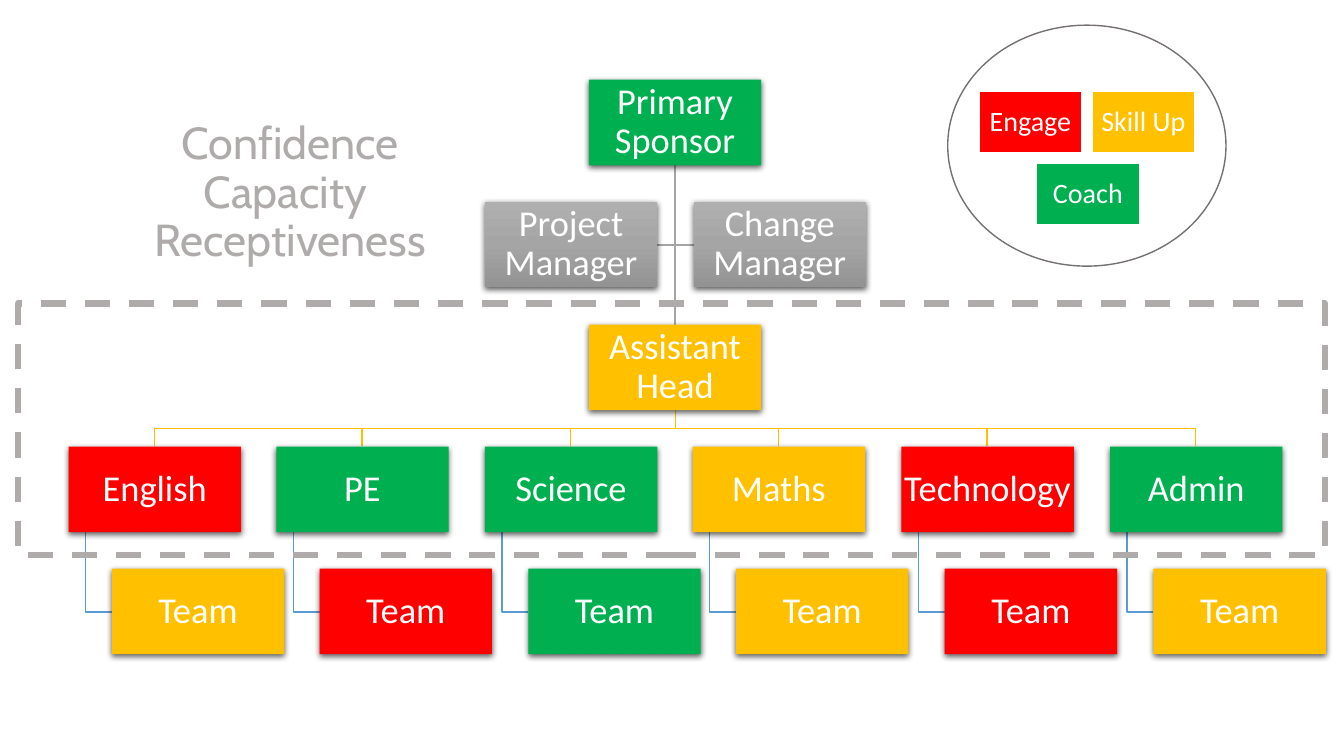
import copy
from dataclasses import dataclass

from lxml import etree
from pptx import Presentation
from pptx import util as u
from pptx.dml.color import RGBColor
from pptx.enum import dml, shapes, text
from pptx.oxml.ns import qn

PX = 9144  # EMU per px, 100 px to the inch


@dataclass(frozen=True)
class Theme:
    red: str = "FF0000"
    amber: str = "FFC000"
    green: str = "00B050"
    grey: str = "A5A5A5"
    grey_stops: tuple = ("AFAFAF", "A5A5A5", "939393")
    blue: str = "5B9BD5"
    muted: str = "AFABAB"
    ring: str = "767171"
    white: str = "FFFFFF"
    body_font: str = "Calibri"
    title_font: str = "Cabin"
    role_size: int = 26
    key_size: int = 20
    title_size: int = 32


@dataclass(frozen=True)
class Box:
    label: str
    left: int
    top: int
    color: str


@dataclass(frozen=True)
class Department:
    name: str
    color: str
    team_color: str


THEME = Theme()
BOX_WIDTH, BOX_HEIGHT = 171, 85
KEY_WIDTH, KEY_HEIGHT = 102, 61
CENTRE = 670
SPONSOR_TOP, MANAGER_TOP, HEAD_TOP, DEPARTMENT_TOP, TEAM_TOP = 79, 200, 322, 443, 564
FIRST_LEFT, PITCH_TENTHS, TEAM_INDENT, STEM_INDENT = 68, 2066, 43, 17

SPONSOR = Box("Primary Sponsor", 584, SPONSOR_TOP, THEME.green)
HEAD = Box("Assistant Head", 584, HEAD_TOP, THEME.amber)
MANAGERS = [
    Box("Project Manager", 481, MANAGER_TOP, THEME.grey),
    Box("Change Manager", 688, MANAGER_TOP, THEME.grey),
]
DEPARTMENTS = [
    Department("English", THEME.red, THEME.amber),
    Department("PE", THEME.green, THEME.red),
    Department("Science", THEME.green, THEME.green),
    Department("Maths", THEME.amber, THEME.amber),
    Department("Technology", THEME.red, THEME.red),
    Department("Admin", THEME.green, THEME.amber),
]
KEYS = [
    Box("Engage", 971, 91, THEME.red),
    Box("Skill Up", 1083, 91, THEME.amber),
    Box("Coach", 1028, 162, THEME.green),
]
TITLE_LINES = ["Confidence", "Capacity ", "Receptiveness"]


def apply(target, values: dict) -> None:
    for name, value in values.items():
        setattr(target, name, value)


def set_line(shape, color: str, points: float = 1) -> None:
    shape.line.color.rgb = RGBColor.from_string(color)
    shape.line.width = u.Pt(points)


def format_text(shape, font_name: str, size: int, color: str) -> None:
    apply(shape.text_frame, {
        "word_wrap": True,
        "auto_size": text.MSO_AUTO_SIZE.NONE,
        "vertical_anchor": text.MSO_ANCHOR.MIDDLE,
    })
    paragraph = shape.text_frame.paragraphs[0]
    apply(paragraph, {"alignment": text.PP_ALIGN.CENTER, "line_spacing": 0.9})
    for run in paragraph.runs:
        apply(run.font, {"name": font_name, "size": u.Pt(size)})
        run.font.color.rgb = RGBColor.from_string(color)


def add_preset(slide, kind, left: int, top: int, width: int, height: int):
    shape = slide.shapes.add_shape(kind, left * PX, top * PX, width * PX, height * PX)
    shape.shadow.inherit = False
    shape.fill.background()
    return shape


def add_label_box(slide, box: Box, width: int, height: int, size: int, inset: int):
    shape = add_preset(slide, shapes.MSO_SHAPE.RECTANGLE, box.left, box.top, width, height)
    shape.fill.solid()
    shape.fill.fore_color.rgb = RGBColor.from_string(box.color)
    frame = shape.text_frame
    frame.text = box.label
    sides = ("margin_left", "margin_top", "margin_right", "margin_bottom")
    apply(frame, dict.fromkeys(sides, inset * PX))
    format_text(shape, THEME.body_font, size, THEME.white)
    return shape


def add_soft_shadow(shape) -> None:
    effects = shape.element.spPr.find(qn("a:effectLst"))
    shadow = etree.SubElement(effects, qn("a:outerShdw"), blurRad="57150",
                              dist="19050", dir="5400000", algn="ctr", rotWithShape="0")
    black = etree.SubElement(shadow, qn("a:srgbClr"), val="000000")
    etree.SubElement(black, qn("a:alpha"), val="63000")


def fill_grey_gradient(shape) -> None:
    shape.fill.gradient()
    shape.fill.gradient_angle = 270
    stops = shape.element.spPr.find(qn("a:gradFill")).find(qn("a:gsLst"))
    middle = copy.deepcopy(stops[0])
    middle.set("pos", "50000")
    stops.insert(1, middle)
    for stop, color in zip(shape.fill.gradient_stops, THEME.grey_stops):
        stop.color.rgb = RGBColor.from_string(color)


def add_role(slide, box: Box):
    shape = add_label_box(slide, box, BOX_WIDTH, BOX_HEIGHT, THEME.role_size, 2)
    shape.line.fill.background()
    add_soft_shadow(shape)
    if box.color == THEME.grey:
        fill_grey_gradient(shape)
    return shape


def add_branch(slide, points: list[tuple[int, int]], color: str) -> None:
    builder = slide.shapes.build_freeform(*points[0], scale=PX)
    builder.add_line_segments(points[1:], close=False)
    shape = builder.convert_to_shape()
    shape.shadow.inherit = False
    shape.fill.background()
    set_line(shape, color)


def add_trunk(slide):
    trunk = slide.shapes.add_connector(
        shapes.MSO_CONNECTOR.STRAIGHT, CENTRE * PX, (SPONSOR_TOP + BOX_HEIGHT) * PX,
        CENTRE * PX, HEAD_TOP * PX)
    etree.SubElement(trunk.element.spPr, qn("a:effectLst"))
    set_line(trunk, THEME.grey)
    return trunk


def add_title(slide) -> None:
    title = slide.shapes.title
    apply(title, {"left": 18 * PX, "top": 91 * PX, "width": 540 * PX, "height": 202 * PX})
    paragraph = title.text_frame.paragraphs[0]
    for index, line in enumerate(TITLE_LINES):
        if index:
            paragraph.add_line_break()
        paragraph.add_run().text = line
    format_text(title, THEME.title_font, THEME.title_size, THEME.muted)


def add_organisation(slide) -> None:
    lefts = [FIRST_LEFT + PITCH_TENTHS * i // 10 for i in range(len(DEPARTMENTS))]

    # Branches lie behind the boxes
    trunk = add_trunk(slide)
    sponsor_bottom = SPONSOR_TOP + BOX_HEIGHT
    manager_middle = MANAGER_TOP + BOX_HEIGHT // 2 + 1
    for edge in (MANAGERS[0].left + BOX_WIDTH, MANAGERS[1].left):
        add_branch(slide, [(CENTRE, sponsor_bottom), (CENTRE, manager_middle),
                           (edge, manager_middle)], THEME.grey)
    head_bottom = HEAD_TOP + BOX_HEIGHT
    rail = (head_bottom + DEPARTMENT_TOP) // 2
    team_middle = TEAM_TOP + BOX_HEIGHT // 2 + 1
    for left in lefts:
        middle, stem = left + BOX_WIDTH // 2, left + STEM_INDENT
        add_branch(slide, [(CENTRE, head_bottom), (CENTRE, rail), (middle, rail),
                           (middle, DEPARTMENT_TOP)], THEME.amber)
        add_branch(slide, [(stem, DEPARTMENT_TOP + BOX_HEIGHT), (stem, team_middle),
                           (left + TEAM_INDENT, team_middle)], THEME.blue)

    # Leaders, departments and their teams
    trunk.begin_connect(add_role(slide, SPONSOR), 2)
    trunk.end_connect(add_role(slide, HEAD), 0)
    for left, department in zip(lefts, DEPARTMENTS):
        add_role(slide, Box(department.name, left, DEPARTMENT_TOP, department.color))
        add_role(slide, Box("Team", left + TEAM_INDENT, TEAM_TOP, department.team_color))
    for manager in MANAGERS:
        add_role(slide, manager)


def add_key(slide) -> None:
    for key in KEYS:
        shape = add_label_box(slide, key, KEY_WIDTH, KEY_HEIGHT, THEME.key_size, 8)
        set_line(shape, THEME.white)
    set_line(add_preset(slide, shapes.MSO_SHAPE.OVAL, 940, 25, 276, 239), THEME.ring)


def main() -> None:
    presentation = Presentation()
    apply(presentation, {"slide_width": 1333 * PX, "slide_height": 750 * PX})
    slide = presentation.slides.add_slide(presentation.slide_layouts[5])
    add_organisation(slide)
    add_title(slide)
    add_key(slide)

    # Dashed frame around the department level
    frame = add_preset(slide, shapes.MSO_SHAPE.RECTANGLE, 18, 301, 1296, 250)
    set_line(frame, THEME.muted, 4.5)
    frame.line.dash_style = dml.MSO_LINE.DASH
    presentation.save("out.pptx")


if __name__ == "__main__":
    main()
